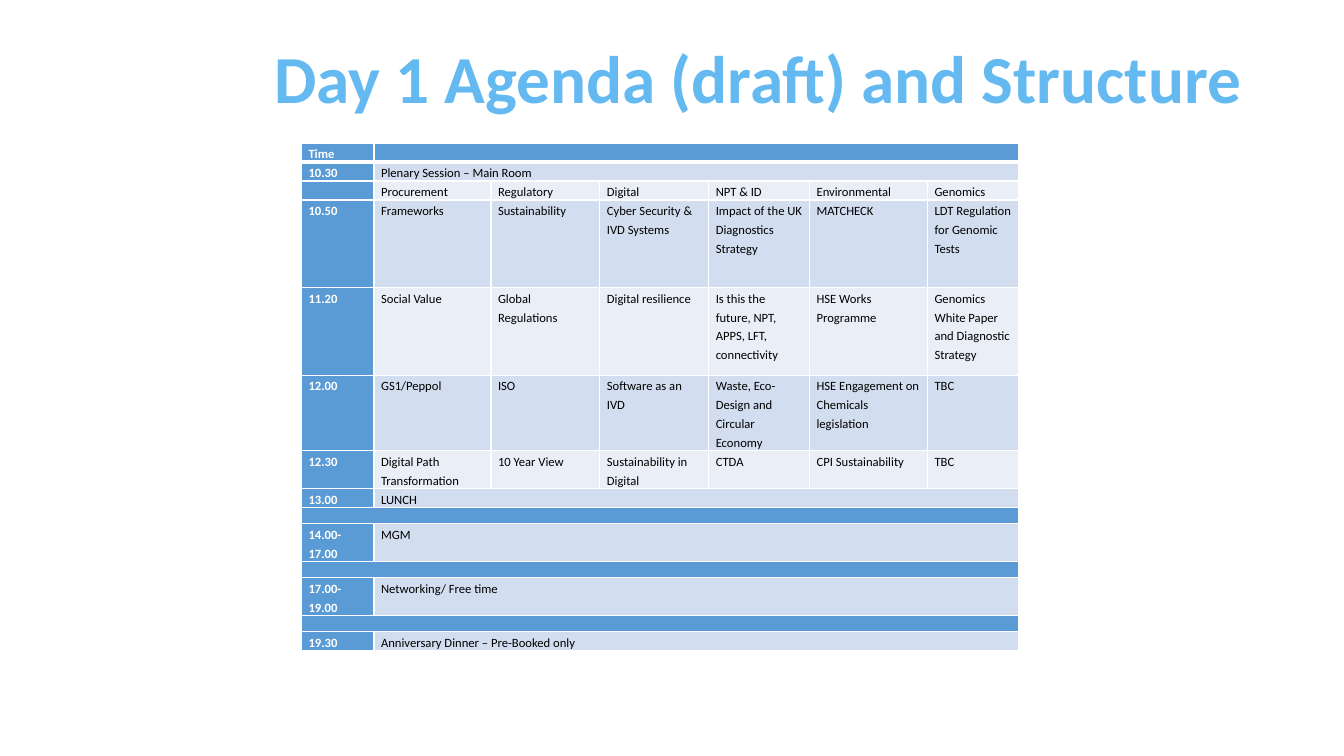
from lxml import etree
from pptx import Presentation
from pptx.dml.color import RGBColor
from pptx.enum.text import MSO_ANCHOR, PP_ALIGN
from pptx.oxml.ns import qn
from pptx.util import Inches, Pt

TOP = MSO_ANCHOR.TOP
LEFT, RIGHT = PP_ALIGN.LEFT, PP_ALIGN.RIGHT
COLORS = {
    "title": "64B9F0",
    "header": "5B9BD5",
    "odd": "D2DEEF",
    "even": "EAEFF7",
    "white": "FFFFFF",
    "black": "000000",
}
UNIT = 0.1
COLUMN_WIDTHS = [7.2, 11.6, 10.8, 10.8, 10, 11.7, 9]
LINE = 1.6
AGENDA = [
    (LINE, ["Time", ""]),
    (LINE, ["10.30", "Plenary Session – Main Room"]),
    (LINE, ["", "Procurement", "Regulatory", "Digital", "NPT & ID",
            "Environmental", "Genomics"]),
    (8.7, ["10.50", "Frameworks", "Sustainability", "Cyber Security & IVD Systems",
           "Impact of the UK Diagnostics Strategy", "MATCHECK",
           "LDT Regulation for Genomic Tests"]),
    (8.7, ["11.20", "Social Value", "Global Regulations", "Digital resilience",
           "Is this the future, NPT, APPS, LFT, connectivity",
           "HSE Works Programme", "Genomics White Paper and Diagnostic Strategy"]),
    (6.9, ["12.00", "GS1/Peppol", "ISO", "Software as an IVD",
           "Waste, Eco-Design and Circular Economy",
           "HSE Engagement on Chemicals legislation", "TBC"]),
    (3.4, ["12.30", "Digital Path Transformation", "10 Year View",
           "Sustainability in Digital", "CTDA", "CPI Sustainability", "TBC"]),
    (LINE, ["13.00", "LUNCH"]),
    (LINE, [""]),
    (3.4, ["14.00-17.00", "MGM"]),
    (LINE, [""]),
    (3.4, ["17.00-19.00", "Networking/ Free time"]),
    (LINE, [""]),
    (LINE, ["19.30", "Anniversary Dinner – Pre-Booked only"]),
]


def grid(units):
    return Inches(units * UNIT)


def write(frame, text, size, color, bold=False, align=LEFT, spacing=1.0):
    para = frame.paragraphs[0]
    para.alignment = align
    para.line_spacing = spacing
    if not text:
        etree.SubElement(para._p, qn("a:endParaRPr"), sz=str(size * 100))
        return
    span = para.add_run()
    span.text = text
    span.font.name = "Calibri"
    span.font.size = Pt(size)
    span.font.bold = bold
    span.font.color.rgb = RGBColor.from_string(COLORS[color])


class AgendaSlide:
    def __init__(self, deck):
        self.slide = deck.slides.add_slide(deck.slide_layouts[6])

    def title(self, text, left, top, width, height):
        box = self.slide.shapes.add_textbox(*map(grid, (left, top, width, height)))
        box.text_frame.word_wrap = True
        box.text_frame.vertical_anchor = TOP
        write(box.text_frame, text, size=48, color="title", bold=True,
              align=RIGHT, spacing=0.9)

    def borders(self, cell, **widths):
        properties = cell._tc.get_or_add_tcPr()
        for side in "LRTB":
            width = Pt(widths.get(side, 1))
            line = etree.SubElement(properties, qn(f"a:ln{side}"), w=str(width))
            fill = etree.SubElement(line, qn("a:solidFill"))
            etree.SubElement(fill, qn("a:srgbClr"), val=COLORS["white"])

    def cell(self, cell, text, fill, row):
        cell.margin_left = cell.margin_right = Inches(0.07)
        cell.margin_top = cell.margin_bottom = 0
        cell.vertical_anchor = TOP
        edges = {0: {"B": 3}, 1: {"T": 3}}
        self.borders(cell, **edges.get(row, {}))
        cell.fill.solid()
        cell.fill.fore_color.rgb = RGBColor.from_string(COLORS[fill])
        heading = fill == "header"
        write(cell.text_frame, text, size=9, bold=heading,
              color="white" if heading else "black", spacing=Pt(13.5))

    def table(self, rows, widths, left, top):
        height = sum(units for units, _ in rows)
        frame = self.slide.shapes.add_table(
            len(rows), len(widths), grid(left), grid(top),
            grid(sum(widths)), grid(height))
        table = frame.table
        last = len(widths) - 1
        for column, width in zip(table.columns, widths):
            column.width = grid(width)
        for row, (units, texts) in enumerate(rows):
            table.rows[row].height = grid(units)
            band = "odd" if row % 2 else "even"
            for column in range(len(widths)):
                heading = row == 0 or column == 0 or len(texts) == 1
                text = texts[column] if column < len(texts) else ""
                self.cell(table.cell(row, column), text,
                          "header" if heading else band, row)
            if len(texts) <= last:
                table.cell(row, len(texts) - 1).merge(table.cell(row, last))


def main():
    deck = Presentation()
    deck.slide_width, deck.slide_height = Inches(13.33), Inches(7.5)
    page = AgendaSlide(deck)
    page.title("Day 1 Agenda (draft) and Structure", 9.2, 4, 115, 14.5)
    page.table(AGENDA, COLUMN_WIDTHS, 29.9, 14.2)
    deck.save("out.pptx")


if __name__ == "__main__":
    main()
